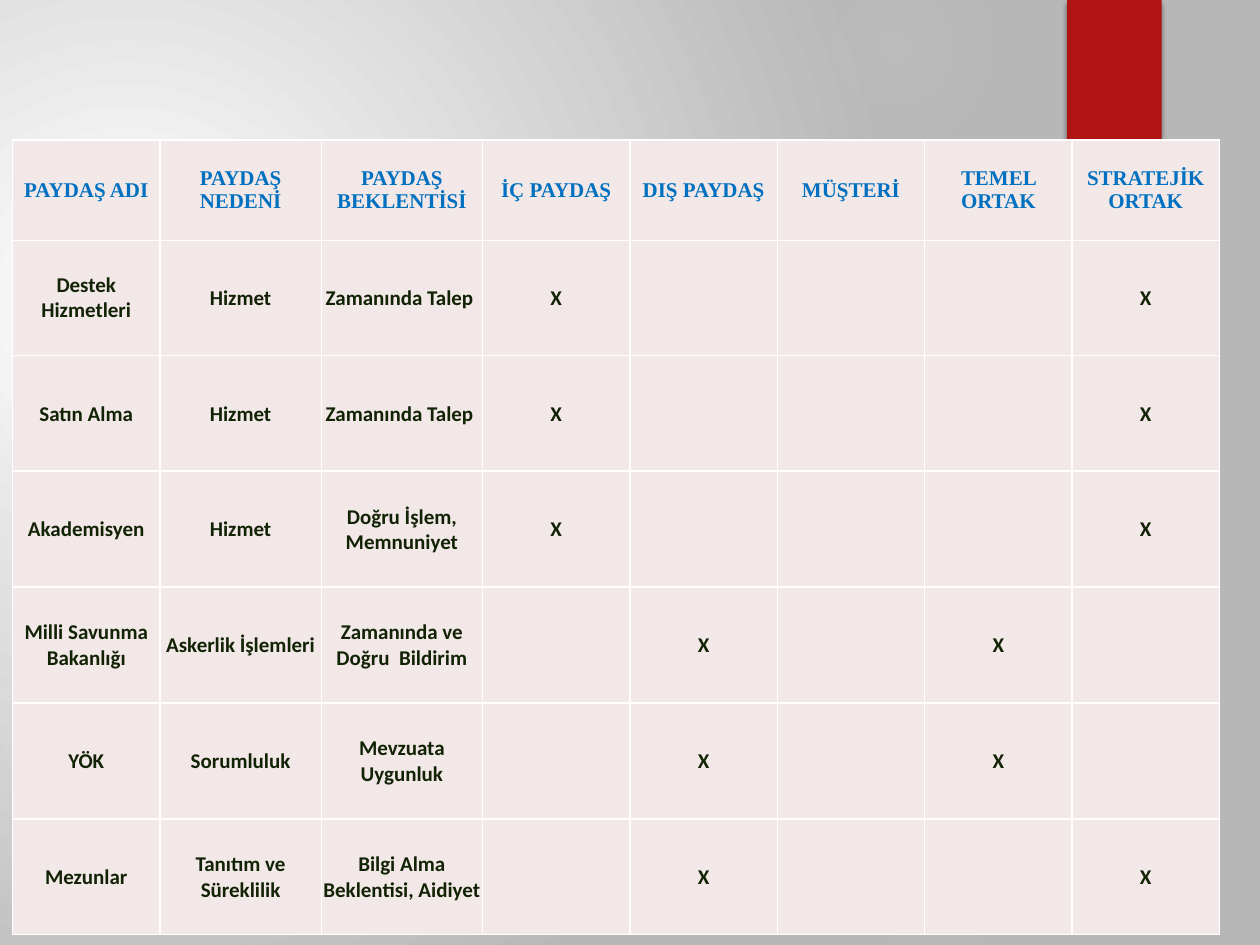
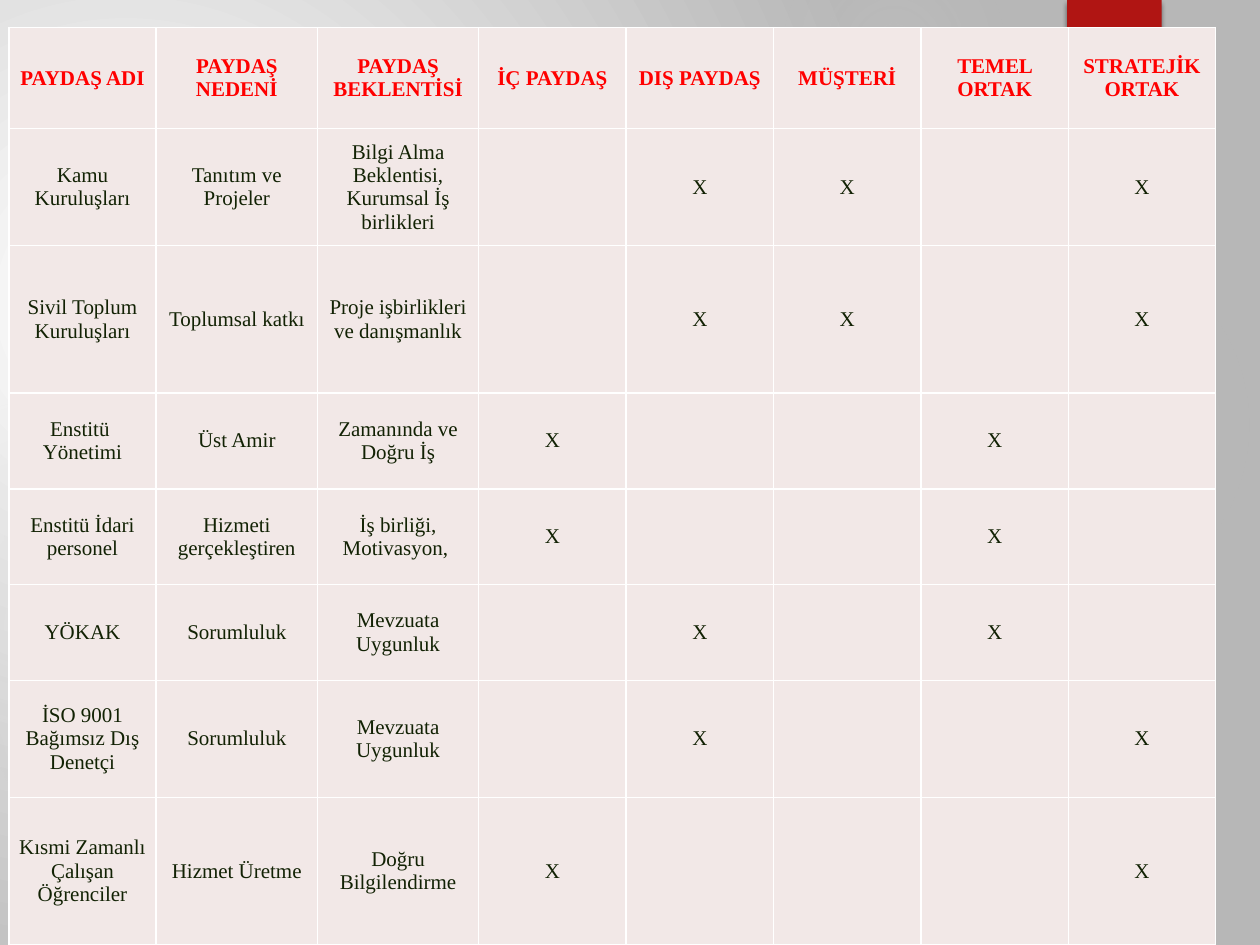
from dataclasses import dataclass
from enum import IntEnum

from lxml import etree
from pptx import Presentation
from pptx import util as u
from pptx.dml import color
from pptx.enum import shapes, text
from pptx.oxml import ns

COLORS = {
    "white": "FFFFFF",
    "edge": "B7B7B7",
    "glow": "D9D9D9",
    "ribbon": "B01513",
    "shadow": "000000",
    "cell": "F2E8E7",
    "body": "122204",
    "blue": "0070C0",
    "red": "FF0000",
}
SERIF = "Times New Roman"
SANS = "Calibri"
HEADINGS = ["PAYDAŞ ADI", "PAYDAŞ NEDENİ", "PAYDAŞ BEKLENTİSİ", "İÇ PAYDAŞ",
            "DIŞ PAYDAŞ", "MÜŞTERİ", "TEMEL ORTAK", "STRATEJİK ORTAK"]
COLUMN_WIDTHS = [1.17, 1.28, 1.28] + [1.17] * 5
HEADING_HEIGHT = 0.8


class Role(IntEnum):
    INTERNAL = 3
    EXTERNAL = 4
    CUSTOMER = 5
    CORE = 6
    STRATEGIC = 7


@dataclass(frozen=True)
class Stop:
    position: int
    color: str
    opacity: int = 100


@dataclass(frozen=True)
class Glow:
    left: float
    top: float
    size: float
    stops: tuple[tuple[int, int], ...]


@dataclass(frozen=True)
class TextStyle:
    font: str
    color: str
    bold: bool
    margin: float = 0


@dataclass(frozen=True)
class Stakeholder:
    name: str
    reason: str
    expectation: str
    roles: tuple[Role, ...]
    height: float = 0.92

    def cells(self) -> list[str]:
        marks = ["X" if role in self.roles else "" for role in Role]
        return [self.name, self.reason, self.expectation] + marks


@dataclass(frozen=True)
class StakeholderSlide:
    left: float
    heading_top: float
    body_top: float
    heading_style: TextStyle
    body_style: TextStyle
    stakeholders: list[Stakeholder]


GLOWS = [
    Glow(6.89, 1.83, 3.08, ((0, 7), (36, 6), (69, 0))),
    Glow(6.22, -0.5, 1.75, ((0, 14), (36, 7), (73, 0))),
    Glow(6.89, 6.67, 1.08, ((0, 9), (36, 5), (66, 0))),
    Glow(-0.17, 2.92, 4.58, ((0, 11), (36, 10), (75, 0))),
    Glow(-0.92, 3.17, 2.58, ((0, 8), (36, 8), (72, 0))),
]

SLIDES = [
    StakeholderSlide(
        0.1, 1.11, 1.9,
        TextStyle(SERIF, "blue", True),
        TextStyle(SANS, "body", True, 0.01),
        [
            Stakeholder("Destek Hizmetleri", "Hizmet", "Zamanında Talep ",
                        (Role.INTERNAL, Role.STRATEGIC)),
            Stakeholder("Satın Alma", "Hizmet", "Zamanında Talep ",
                        (Role.INTERNAL, Role.STRATEGIC)),
            Stakeholder("Akademisyen", "Hizmet", "Doğru İşlem, Memnuniyet",
                        (Role.INTERNAL, Role.STRATEGIC)),
            Stakeholder("Milli Savunma Bakanlığı", "Askerlik İşlemleri",
                        "Zamanında ve Doğru  Bildirim", (Role.EXTERNAL, Role.CORE)),
            Stakeholder("YÖK", "Sorumluluk", "Mevzuata Uygunluk",
                        (Role.EXTERNAL, Role.CORE)),
            Stakeholder("Mezunlar", "Tanıtım ve Süreklilik",
                        "Bilgi Alma Beklentisi, Aidiyet",
                        (Role.EXTERNAL, Role.STRATEGIC)),
        ],
    ),
    StakeholderSlide(
        0.07, 0.22, 1.02,
        TextStyle(SERIF, "red", True),
        TextStyle(SERIF, "body", False),
        [
            Stakeholder("Kamu Kuruluşları", "Tanıtım ve Projeler",
                        "Bilgi Alma Beklentisi, Kurumsal İş birlikleri",
                        (Role.EXTERNAL, Role.CUSTOMER, Role.STRATEGIC), 0.93),
            Stakeholder("Sivil Toplum Kuruluşları", "Toplumsal katkı",
                        "Proje işbirlikleri ve danışmanlık",
                        (Role.EXTERNAL, Role.CUSTOMER, Role.STRATEGIC), 1.17),
            Stakeholder("Enstitü \nYönetimi", "Üst Amir", "Zamanında ve Doğru İş",
                        (Role.INTERNAL, Role.CORE), 0.76),
            Stakeholder("Enstitü İdari personel", "Hizmeti gerçekleştiren",
                        "İş birliği, Motivasyon, ", (Role.INTERNAL, Role.CORE), 0.76),
            Stakeholder("YÖKAK", "Sorumluluk", "Mevzuata Uygunluk",
                        (Role.EXTERNAL, Role.CORE), 0.76),
            Stakeholder("İSO 9001 Bağımsız Dış Denetçi", "Sorumluluk",
                        "Mevzuata Uygunluk", (Role.EXTERNAL, Role.STRATEGIC), 0.93),
            Stakeholder("Kısmi Zamanlı Çalışan Öğrenciler", "Hizmet Üretme",
                        "Doğru Bilgilendirme", (Role.INTERNAL, Role.STRATEGIC), 1.17),
        ],
    ),
]


def rgb(name: str) -> color.RGBColor:
    return color.RGBColor.from_string(COLORS[name])


def add_element(parent, tag: str, **attributes):
    values = {key: str(value) for key, value in attributes.items()}
    return etree.SubElement(parent, ns.qn(tag), values)


def add_color(parent, name: str, opacity: int = 100) -> None:
    element = add_element(parent, "a:srgbClr", val=COLORS[name])
    if opacity < 100:
        add_element(element, "a:alpha", val=opacity * 1000)


def set_circle_gradient(fill, owner, stops: list[Stop], focus: tuple[int, ...]) -> None:
    fill.gradient()
    gradient = owner.element.xpath(".//a:gradFill")[0]
    for child in list(gradient):
        gradient.remove(child)
    stop_list = add_element(gradient, "a:gsLst")
    for stop in stops:
        element = add_element(stop_list, "a:gs", pos=stop.position * 1000)
        add_color(element, stop.color, stop.opacity)
    circle = add_element(gradient, "a:path", path="circle")
    sides = {side: percent * 1000 for side, percent in zip("ltrb", focus)}
    add_element(circle, "a:fillToRect", **sides)


def add_plain_shape(slide, kind, left: float, top: float, width: float, height: float):
    shape = slide.shapes.add_shape(kind, u.Inches(left), u.Inches(top),
                                   u.Inches(width), u.Inches(height))
    shape.line.fill.background()
    shape.shadow.inherit = False
    return shape


def add_backdrop(slide) -> None:
    for glow in GLOWS:
        ellipse = add_plain_shape(slide, shapes.MSO_SHAPE.OVAL,
                                  glow.left, glow.top, glow.size, glow.size)
        stops = [Stop(position, "glow", opacity) for position, opacity in glow.stops]
        set_circle_gradient(ellipse.fill, ellipse, stops, (50, 50, 50, 50))
    ribbon = add_plain_shape(slide, shapes.MSO_SHAPE.RECTANGLE, 8.47, 0, 0.75, 1.2)
    ribbon.fill.solid()
    ribbon.fill.fore_color.rgb = rgb("ribbon")
    effects = ribbon.element.xpath(".//a:effectLst")[0]
    shadow = add_element(effects, "a:outerShdw", blurRad=u.Pt(3), dist=u.Pt(2),
                         dir=90 * 60000, rotWithShape=0)
    add_color(shadow, "shadow", 45)


def format_cell(cell, content: str, style: TextStyle) -> None:
    properties = cell._tc.get_or_add_tcPr()
    for side in ("L", "R", "T", "B"):
        border = add_element(properties, f"a:ln{side}", w=u.Pt(1))
        add_color(add_element(border, "a:solidFill"), "white")
    cell.fill.solid()
    cell.fill.fore_color.rgb = rgb("cell")
    cell.vertical_anchor = text.MSO_ANCHOR.MIDDLE
    cell.margin_left = cell.margin_right = cell.margin_top = u.Inches(style.margin)
    cell.margin_bottom = 0
    paragraph = cell.text_frame.paragraphs[0]
    paragraph.text = content
    paragraph.alignment = text.PP_ALIGN.CENTER
    for run in paragraph.runs:
        run.font.name = style.font
        run.font.size = u.Pt(12)
        run.font.bold = style.bold
        run.font.color.rgb = rgb(style.color)


def add_grid(slide, left: float, top: float, rows: list[list[str]],
             heights: list[float], style: TextStyle) -> None:
    frame = slide.shapes.add_table(len(rows), len(COLUMN_WIDTHS), u.Inches(left),
                                   u.Inches(top), u.Inches(sum(COLUMN_WIDTHS)),
                                   u.Inches(sum(heights)))
    table = frame.table
    table.first_row = table.horz_banding = False
    for column, width in zip(table.columns, COLUMN_WIDTHS):
        column.width = u.Inches(width)
    for row, height, contents in zip(table.rows, heights, rows):
        row.height = u.Inches(height)
        for cell, content in zip(row.cells, contents):
            format_cell(cell, content, style)


def add_stakeholder_slide(presentation, content: StakeholderSlide) -> None:
    slide = presentation.slides.add_slide(presentation.slide_layouts[6])
    add_backdrop(slide)
    people = content.stakeholders
    add_grid(slide, content.left, content.body_top, [person.cells() for person in people],
             [person.height for person in people], content.body_style)
    add_grid(slide, content.left, content.heading_top, [HEADINGS], [HEADING_HEIGHT],
             content.heading_style)


def main() -> None:
    presentation = Presentation()
    presentation.slide_width = u.Inches(10)
    presentation.slide_height = u.Inches(7.5)
    master = presentation.slide_master
    set_circle_gradient(master.background.fill, master,
                        [Stop(0, "white"), Stop(100, "edge")], (45, 65, 125, 100))
    for content in SLIDES:
        add_stakeholder_slide(presentation, content)
    presentation.save("out.pptx")


if __name__ == "__main__":
    main()
